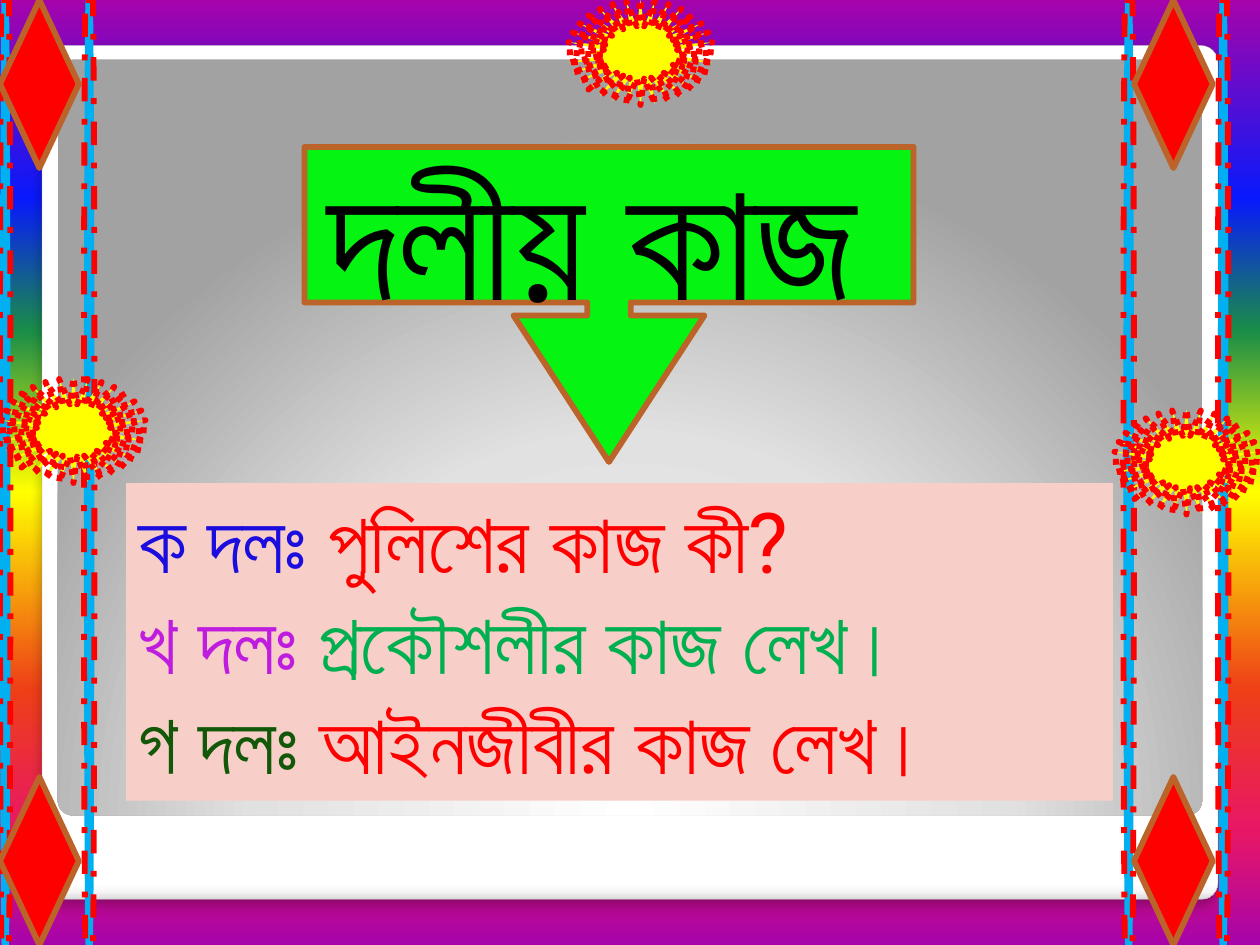
import pptx
import pptx.util
import pptx.dml.color
import pptx.enum.dml
import pptx.enum.shapes
import pptx.enum.text
import pptx.oxml
import pptx.oxml.ns

Pt = pptx.util.Pt
SHAPE = pptx.enum.shapes.MSO_SHAPE
DASH = pptx.enum.dml.MSO_LINE
FONT = "Roboto"

COLORS = {
    "black": "000000", "red": "FF0000", "yellow": "FFFF00", "sky": "00B0F0",
    "lime": "06F411", "brown": "BC6329", "pink": "F8CFC8", "edge": "A4A4A4",
    "blue": "1C0DDF", "violet": "BE1CDE", "green": "00B050", "forest": "125808",
}

# Content
TITLE = "দলীয় কাজ"
TASKS = [
    (("ক দলঃ ", "blue"), ("পুলিশের কাজ কী?", "red")),
    (("খ দলঃ ", "violet"), ("প্রকৌশলীর কাজ লেখ।", "green")),
    (("গ দলঃ ", "forest"), ("আইনজীবীর কাজ লেখ।", "red")),
]

# Gradient stops: position in percent, colour
RAINBOW = [(0, "A603AB"), (21, "0819FB"), (35, "1A8D48"), (52, "FFFF00"),
           (73, "EE3F17"), (88, "E81766"), (100, "A603AB")]
FRAME_STOPS = [(0, "FFFFFF"), (98, "FFFFFF"), (99, "F7F7F7"), (100, "DADADA")]
PANEL_STOPS = [(0, "FFFFFF"), (55, "E1E1E1"), (100, "A2A2A2")]
DOWNWARD = '<a:lin {ns} ang="5400000" scaled="0"/>'
FROM_BELOW = ('<a:path {ns} path="circle"><a:fillToRect l="50000" t="175000" '
              'r="50000" b="-75000"/></a:path>')
FRAME_SHADOW = ('<a:effectLst {ns}><a:outerShdw blurRad="76200" dist="50800" dir="5400000" '
                'algn="tl" rotWithShape="0"><a:srgbClr val="000000"><a:alpha val="25000"/>'
                '</a:srgbClr></a:outerShdw></a:effectLst>')

# Ornament positions
BAR_LEFTS = [48, 642, 0, 696]
DIAMOND_CENTERS = [(x, y) for x in (22.5, 670.5) for y in (48, 492)]
STAR_CORNERS = [(324, 0), (636, 234), (0, 216)]


def rgb(name):
    return pptx.dml.color.RGBColor.from_string(COLORS[name])


def element(xml):
    return pptx.oxml.parse_xml(xml.format(ns=pptx.oxml.ns.nsdecls("a")))


def set_gradient(fill, owner, stops, direction):
    fill.gradient()
    gradient = owner.find(".//" + pptx.oxml.ns.qn("a:gradFill"))
    for child in list(gradient):
        gradient.remove(child)
    marks = "".join(f'<a:gs pos="{position * 1000}"><a:srgbClr val="{color}"/></a:gs>'
                    for position, color in stops)
    gradient.append(element("<a:gsLst {ns}>" + marks + "</a:gsLst>"))
    gradient.append(element(direction))


def add_shape(kind, left, top, width, height, fill=None, line=None,
              line_width=3.35, dash=None, adjustments=()):
    shape = slide.shapes.add_shape(kind, Pt(left), Pt(top), Pt(width), Pt(height))
    shape.shadow.inherit = False
    for index, value in enumerate(adjustments):
        shape.adjustments[index] = value
    if fill:
        shape.fill.solid()
        shape.fill.fore_color.rgb = rgb(fill)
    if line:
        shape.line.color.rgb = rgb(line)
        shape.line.width = Pt(line_width)
        if dash:
            shape.line.dash_style = dash
    else:
        shape.line.fill.background()
    return shape


def write_text(shape, paragraphs, size):
    frame = shape.text_frame
    frame.word_wrap = True
    frame.auto_size = pptx.enum.text.MSO_AUTO_SIZE.SHAPE_TO_FIT_TEXT
    frame.vertical_anchor = pptx.enum.text.MSO_ANCHOR.TOP
    for index, parts in enumerate(paragraphs):
        paragraph = frame.paragraphs[0] if index == 0 else frame.add_paragraph()
        paragraph.alignment = pptx.enum.text.PP_ALIGN.LEFT
        paragraph.font.size = Pt(size)
        paragraph.font.name = FONT
        for text, color in parts:
            run = paragraph.add_run()
            run.text = text
            run.font.color.rgb = rgb(color)


presentation = pptx.Presentation()
presentation.slide_width, presentation.slide_height = Pt(720), Pt(540)
slide = presentation.slides.add_slide(presentation.slide_layouts[6])

# Background, frame and panel
set_gradient(slide.background.fill, slide.element, RAINBOW, DOWNWARD)
frame = add_shape(SHAPE.ROUNDED_RECTANGLE, 24, 26, 672, 488, line="edge",
                  line_width=0.16, adjustments=[0.02])
set_gradient(frame.fill, frame.element, FRAME_STOPS, DOWNWARD)
properties = frame.element.spPr
properties.replace(properties.find(pptx.oxml.ns.qn("a:effectLst")), element(FRAME_SHADOW))
panel = add_shape(SHAPE.ROUNDED_RECTANGLE, 33, 34, 654, 432, adjustments=[0.02])
set_gradient(panel.fill, panel.element, PANEL_STOPS, FROM_BELOW)

# Title callout
add_shape(SHAPE.DOWN_ARROW_CALLOUT, 174, 84, 348, 180, "lime", "brown",
          adjustments=[0.138, 0.303, 0.465, 0.494])

# Side bars, corner diamonds and stars
for left in BAR_LEFTS:
    add_shape(SHAPE.FLOWCHART_TERMINATOR, left, 0, 6, 540, "sky", "red", dash=DASH.DASH_DOT)
for x, y in DIAMOND_CENTERS:
    diamond = add_shape(SHAPE.FLOWCHART_DECISION, x - 48, y - 22.5, 96, 45, "red", "brown")
    diamond.rotation = 90
for left, top in STAR_CORNERS:
    add_shape(SHAPE.STAR_32_POINT, left, top, 84, 60, "yellow", "red",
              dash=DASH.ROUND_DOT, adjustments=[0.25])

# Title and group tasks
title = slide.shapes.add_textbox(Pt(180), Pt(72), Pt(342), Pt(124))
write_text(title, [[(TITLE, "black")]], 96)
tasks = add_shape(SHAPE.RECTANGLE, 72, 276, 564, 181.5, "pink")
write_text(tasks, TASKS, 48)

presentation.save("out.pptx")
